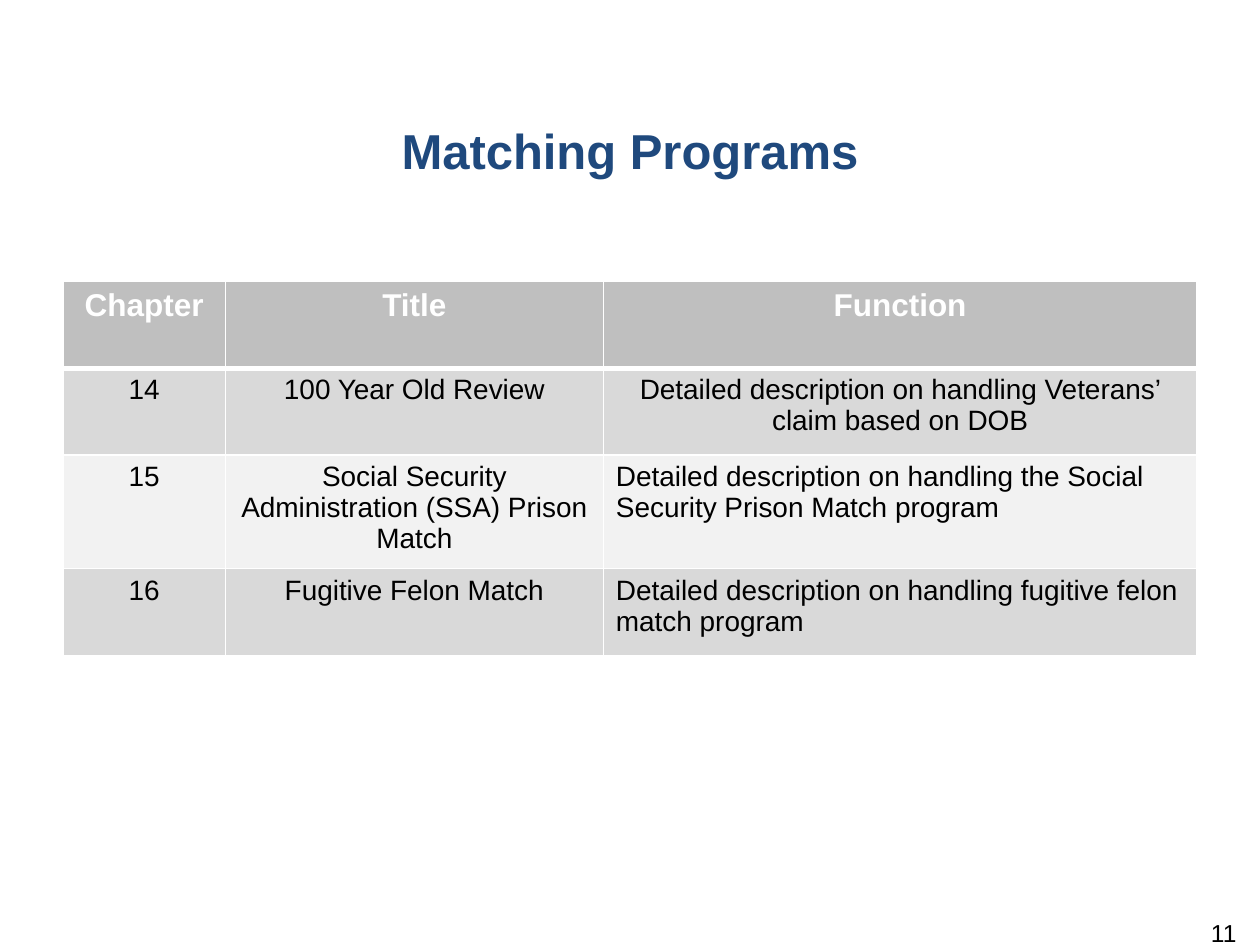
from dataclasses import dataclass

from lxml.etree import SubElement
from pptx import Presentation
from pptx.dml.color import RGBColor
from pptx.enum.text import PP_ALIGN
from pptx.oxml.ns import qn
from pptx.slide import Slide
from pptx.table import _Cell
from pptx.text.text import TextFrame
from pptx.util import Pt


@dataclass(frozen=True)
class Theme:
    font: str = "Arial"
    title_color: str = "1F497D"
    header_text: str = "FFFFFF"
    body_text: str = "000000"
    header_fill: str = "BFBFBF"
    band_fills: tuple[str, str] = ("D9D9D9", "F2F2F2")
    border: str = "FFFFFF"
    title_size: float = 28
    header_size: float = 18
    body_size: float = 16
    number_size: float = 14


@dataclass(frozen=True)
class TextStyle:
    size: float
    color: str
    bold: bool = False
    align: PP_ALIGN = PP_ALIGN.CENTER
    space_before: float = 0


@dataclass(frozen=True)
class Box:
    left: float
    top: float
    width: float
    height: float


@dataclass(frozen=True)
class Program:
    chapter: str
    title: str
    function: str
    function_align: PP_ALIGN = PP_ALIGN.LEFT


THEME = Theme()
TITLE = TextStyle(THEME.title_size, THEME.title_color, bold=True)
HEADER = TextStyle(THEME.header_size, THEME.header_text, bold=True)
NUMBER = TextStyle(THEME.number_size, THEME.body_text, align=PP_ALIGN.RIGHT)

TABLE_BOX = Box(36, 160.8, 648, 198.72)
COLUMN_WIDTHS = (92.8, 216, 339.2)
HEADINGS = ("Chapter", "Title", "Function")
PROGRAMS = (
    Program("14", "100 Year Old Review",
            "Detailed description on handling Veterans’ claim based on DOB",
            PP_ALIGN.CENTER),
    Program("15", "Social Security Administration (SSA) Prison Match",
            "Detailed description on handling the Social Security Prison Match program"),
    Program("16", "Fugitive Felon Match",
            "Detailed description on handling fugitive felon match program"),
)


def write_text(frame: TextFrame, text: str, style: TextStyle) -> None:
    paragraph = frame.paragraphs[0]
    paragraph.alignment = style.align
    run = paragraph.add_run()
    run.text = text
    run.font.name = THEME.font
    run.font.size = Pt(style.size)
    run.font.bold = style.bold
    run.font.color.rgb = RGBColor.from_string(style.color)


def add_text(slide: Slide, box: Box, text: str, style: TextStyle, margin_top: float) -> None:
    shape = slide.shapes.add_textbox(Pt(box.left), Pt(box.top), Pt(box.width), Pt(box.height))
    shape.text_frame.word_wrap = True
    shape.text_frame.margin_top = Pt(margin_top)
    write_text(shape.text_frame, text, style)


def set_borders(cell: _Cell, bottom_width: float) -> None:
    """Draw thin borders with a chosen bottom width; call before filling the cell."""
    properties = cell._tc.get_or_add_tcPr()
    for side, width in (("L", 1), ("R", 1), ("T", 1), ("B", bottom_width)):
        line = SubElement(properties, qn(f"a:ln{side}"), w=str(Pt(width)))
        fill = SubElement(line, qn("a:solidFill"))
        SubElement(fill, qn("a:srgbClr"), val=THEME.border)


def fill_cell(cell: _Cell, text: str, style: TextStyle, fill: str, bottom_width: float) -> None:
    set_borders(cell, bottom_width)
    cell.fill.solid()
    cell.fill.fore_color.rgb = RGBColor.from_string(fill)
    write_text(cell.text_frame, text, style)


def add_program_table(slide: Slide) -> None:
    row_count = len(PROGRAMS) + 1
    table = slide.shapes.add_table(
        row_count, len(HEADINGS), Pt(TABLE_BOX.left), Pt(TABLE_BOX.top),
        Pt(TABLE_BOX.width), Pt(TABLE_BOX.height)).table
    for column, width in zip(table.columns, COLUMN_WIDTHS):
        column.width = Pt(width)
    for row in table.rows:
        row.height = Pt(TABLE_BOX.height / row_count)

    for column, heading in enumerate(HEADINGS):
        fill_cell(table.cell(0, column), heading, HEADER, THEME.header_fill, 3)
    for index, program in enumerate(PROGRAMS):
        fill = THEME.band_fills[index % 2]
        entries = (
            (program.chapter, PP_ALIGN.CENTER),
            (program.title, PP_ALIGN.CENTER),
            (program.function, program.function_align),
        )
        for column, (text, align) in enumerate(entries):
            style = TextStyle(THEME.body_size, THEME.body_text, align=align)
            fill_cell(table.cell(index + 1, column), text, style, fill, 1)


def main() -> None:
    presentation = Presentation()
    presentation.slide_width, presentation.slide_height = Pt(720), Pt(540)
    slide = presentation.slides.add_slide(presentation.slide_layouts[6])
    add_text(slide, Box(0, 62.6, 720, 85.7), "Matching Programs", TITLE, 6.4)
    add_program_table(slide)
    add_text(slide, Box(545.8, 519.8, 167.8, 28.8), "11", NUMBER, 5)
    presentation.save("out.pptx")


if __name__ == "__main__":
    main()
